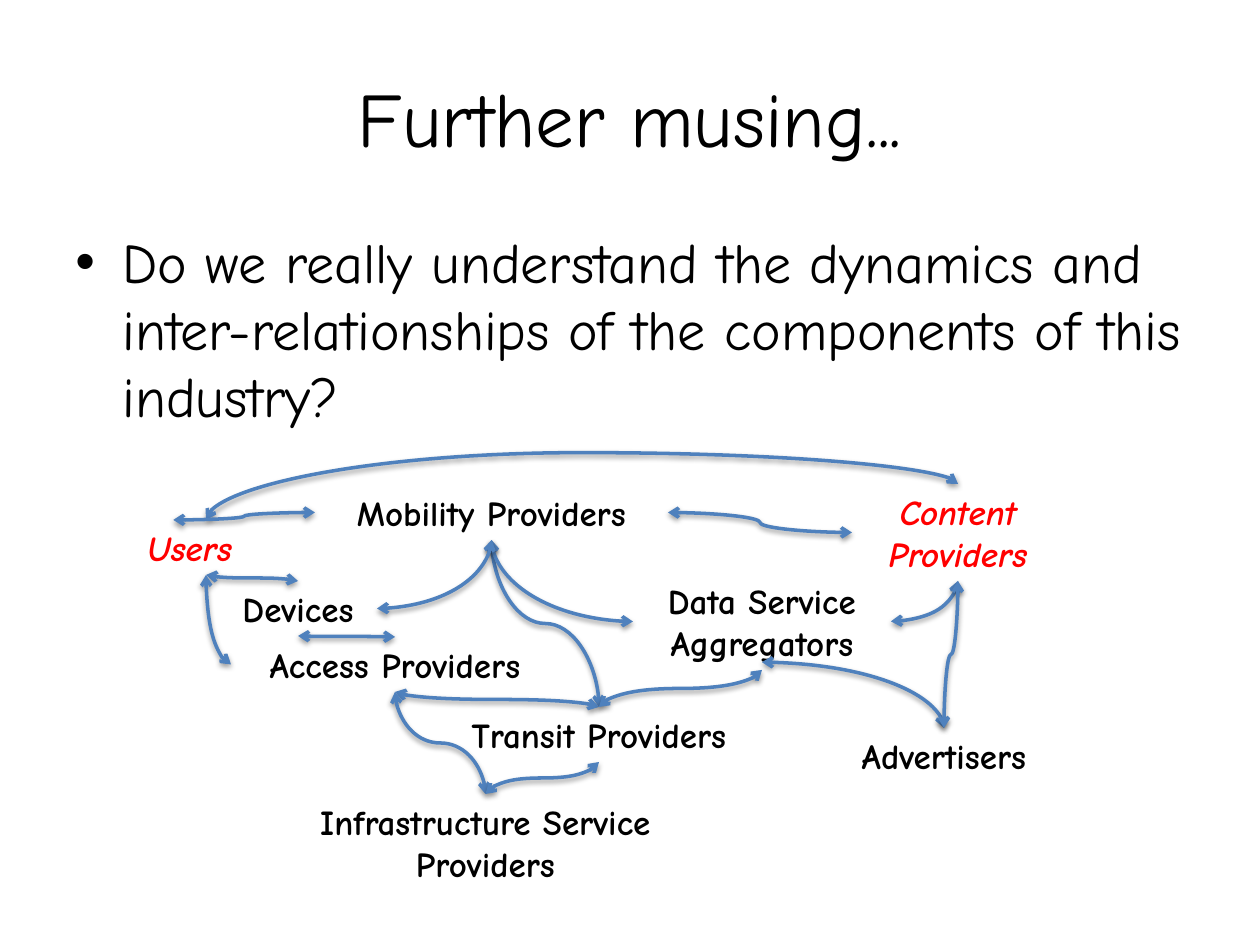
from lxml import etree
from pptx import Presentation
from pptx.dml.color import RGBColor
from pptx.enum.shapes import MSO_CONNECTOR
from pptx.enum.text import MSO_ANCHOR, MSO_AUTO_SIZE, PP_ALIGN
from pptx.oxml.ns import qn
from pptx.util import Emu, Pt

CURVE = MSO_CONNECTOR.CURVE
LEFT, CENTER = PP_ALIGN.LEFT, PP_ALIGN.CENTER
TOP, MIDDLE = MSO_ANCHOR.TOP, MSO_ANCHOR.MIDDLE
FIT, FIXED = MSO_AUTO_SIZE.SHAPE_TO_FIT_TEXT, MSO_AUTO_SIZE.NONE

PX_PER_INCH = 126
COLORS = {"text": "000000", "accent": "FF0000", "link": "4F81BD", "shadow": "000000"}

# Where a link meets a label: share of width, share of height, leaves vertically
SITES = {
    "top": (0.5, 0, True),
    "bottom": (0.5, 1, True),
    "left": (0, 0.5, False),
    "right": (1, 0.5, False),
    "corner": (0.27, 0, False),
    "base": (0.5, 0.92, False),
}

ACCENT = {"color": "accent", "italic": True}
LABELS = {
    "users": ((135, 520, 142, 55), ["Users"], {**ACCENT, "align": LEFT}),
    "content": ((852, 484, 212, 97), ["Content", "Providers"], ACCENT),
    "data": ((633, 573, 258, 97), ["Data Service", "Aggregators"], {}),
    "advertisers": ((830, 728, 228, 55), ["Advertisers"], {}),
    "access": ((231, 637, 328, 55), ["Access Providers"], {}),
    "mobility": ((315, 485, 353, 55), ["Mobility Providers"], {}),
    "devices": ((219, 581, 158, 55), ["Devices"], {}),
    "transit": ((422, 707, 354, 55), ["Transit Providers"], {}),
    "infrastructure": ((265, 794, 441, 97), ["Infrastructure Service", "Providers"], {}),
}

LINKS = [
    ("users", "top", "content", "top", 1.87),
    ("users", "bottom", "devices", "top"),
    ("devices", "bottom", "access", "top"),
    ("mobility", "bottom", "transit", "top"),
    ("access", "bottom", "transit", "top"),
    ("access", "bottom", "infrastructure", "top"),
    ("transit", "bottom", "infrastructure", "top"),
    ("mobility", "bottom", "data", "left"),
    ("data", "right", "content", "bottom"),
    ("mobility", "right", "content", "left"),
    ("data", "base", "advertisers", "top"),
    ("mobility", "bottom", "devices", "right"),
    ("users", "corner", "mobility", "left"),
    ("users", "bottom", "access", "left"),
    ("data", "bottom", "transit", "top"),
    ("advertisers", "top", "content", "bottom"),
]


def px(length):
    return Emu(round(length * 914400 / PX_PER_INCH))


def add_xml(parent, tag, **attributes):
    return etree.SubElement(parent, qn(tag), attributes)


def write_text(frame, lines, *, size, color="text", bold=None, italic=None,
               align=LEFT, anchor=TOP, font="Comic Neue"):
    frame.vertical_anchor = anchor
    for index, line in enumerate(lines):
        para = frame.paragraphs[0] if index == 0 else frame.add_paragraph()
        para.alignment = align
        span = para.add_run()
        span.text = line
        span.font.name = font
        span.font.size = Pt(size)
        span.font.bold = bold
        span.font.italic = italic
        span.font.color.rgb = RGBColor.from_string(COLORS[color])


class SlideBuilder:
    def __init__(self, slide):
        self.slide = slide
        self.label_style = {"size": 20, "bold": True, "align": CENTER}

    def title(self, bounds, text):
        box = self.slide.shapes.title
        box.left, box.top, box.width, box.height = map(px, bounds)
        box.text_frame.auto_size = FIXED
        write_text(box.text_frame, [text], size=44, align=CENTER, anchor=MIDDLE)

    def bullet(self, bounds, text, indent=47):
        box = self.slide.shapes.add_textbox(*map(px, bounds))
        box.text_frame.word_wrap = True
        write_text(box.text_frame, [text], size=32)
        para = box.text_frame.paragraphs[0]
        para.space_before = Pt(6.4)
        properties = para._p.get_or_add_pPr()
        properties.set("marL", str(px(indent)))
        properties.set("indent", str(-px(indent)))
        add_xml(properties, "a:buFont", typeface="Arial")
        add_xml(properties, "a:buChar", char="•")

    def label(self, bounds, lines, **changes):
        box = self.slide.shapes.add_textbox(*map(px, bounds))
        box.text_frame.word_wrap = False
        box.text_frame.auto_size = FIT
        write_text(box.text_frame, lines, **{**self.label_style, **changes})

    def link(self, start, end, start_vertical, end_vertical, bend=None):
        """Draw a two-headed curve that leaves and arrives along the given axes."""
        (x1, y1), (x2, y2) = start, end
        width, height = abs(x2 - x1), abs(y2 - y1)
        turn, flip_h, flip_v = 0, x2 < x1, y2 < y1
        if start_vertical:
            width, height = height, width
            if x2 > x1 and y2 >= y1:
                turn, flip_h, flip_v = 270, True, False
            else:
                turn, flip_h, flip_v = 90, y2 < y1, x2 > x1
        left, top = (x1 + x2 - width) / 2, (y1 + y2 - height) / 2
        line = self.slide.shapes.add_connector(
            CURVE, px(left), px(top), px(left + width), px(top + height))
        line.line.width = Pt(2)
        line.line.color.rgb = RGBColor.from_string(COLORS["link"])

        shape = line.element.spPr
        frame = shape.find(qn("a:xfrm"))
        for name, value in (("rot", turn * 60000), ("flipH", flip_h), ("flipV", flip_v)):
            if value:
                frame.set(name, str(int(value)))
        geometry = shape.find(qn("a:prstGeom"))
        bends = 3 if start_vertical == end_vertical else 2
        geometry.set("prst", f"curvedConnector{bends}")
        if bend:
            add_xml(geometry.find(qn("a:avLst")), "a:gd",
                    name="adj1", fmla=f"val {round(bend * 100000)}")
        stroke = shape.find(qn("a:ln"))
        for tag in ("a:headEnd", "a:tailEnd"):
            add_xml(stroke, tag, type="arrow")
        effects = add_xml(shape, "a:effectLst")
        shadow = add_xml(effects, "a:outerShdw", blurRad=str(Pt(3.1)), dist=str(Pt(1.6)),
                         dir=str(90 * 60000), rotWithShape="0")
        tint = add_xml(shadow, "a:srgbClr", val=COLORS["shadow"])
        add_xml(tint, "a:alpha", val="38000")


def site_point(label, site):
    left, top, width, height = LABELS[label][0]
    across, down, _ = SITES[site]
    return left + across * width, top + down * height


def main():
    deck = Presentation()
    deck.slide_width, deck.slide_height = px(1260), px(945)
    page = SlideBuilder(deck.slides.add_slide(deck.slide_layouts[5]))
    page.title((63, 38, 1134, 158), "Further musing...")
    page.bullet((63, 221, 1134, 229),
                "Do we really understand the dynamics and inter-relationships "
                "of the components of this industry?")
    for bounds, lines, changes in LABELS.values():
        page.label(bounds, lines, **changes)
    for source, exit_site, target, entry_site, *bend in LINKS:
        page.link(site_point(source, exit_site), site_point(target, entry_site),
                  SITES[exit_site][2], SITES[entry_site][2], *bend)
    deck.save("out.pptx")


if __name__ == "__main__":
    main()
